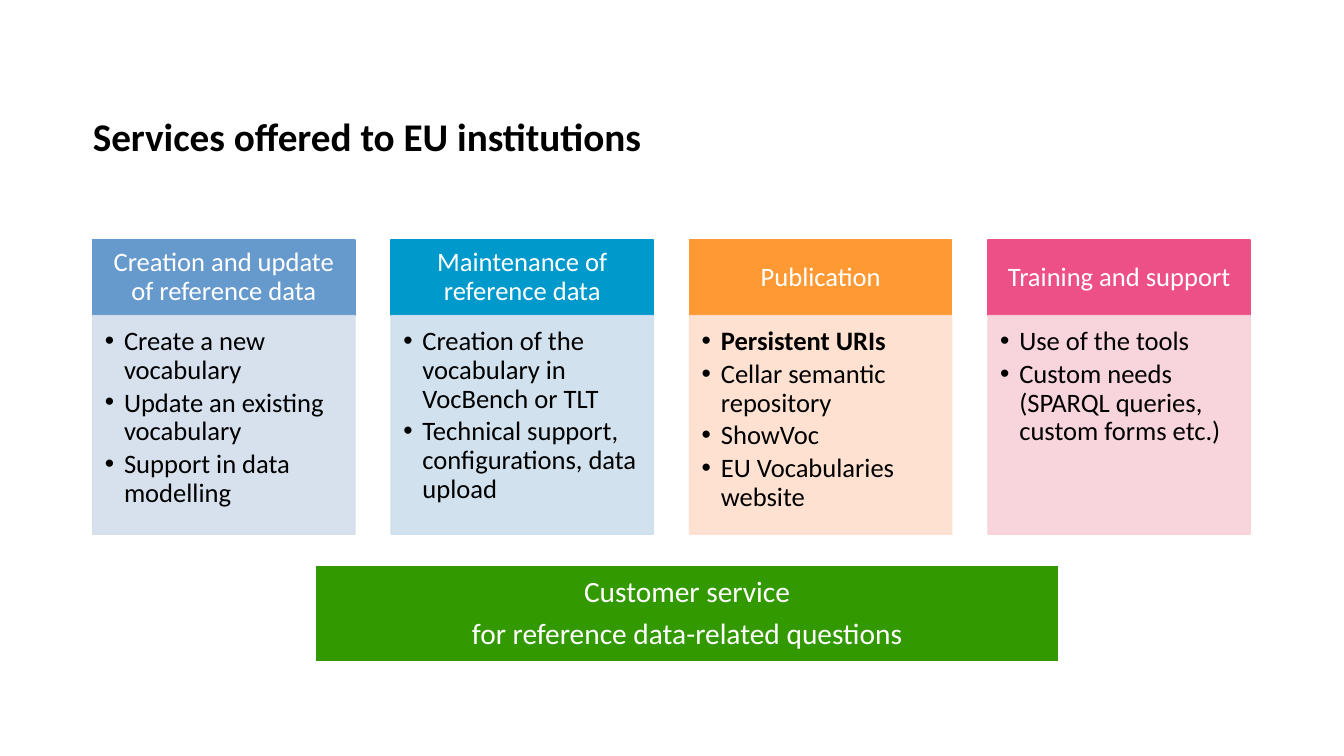
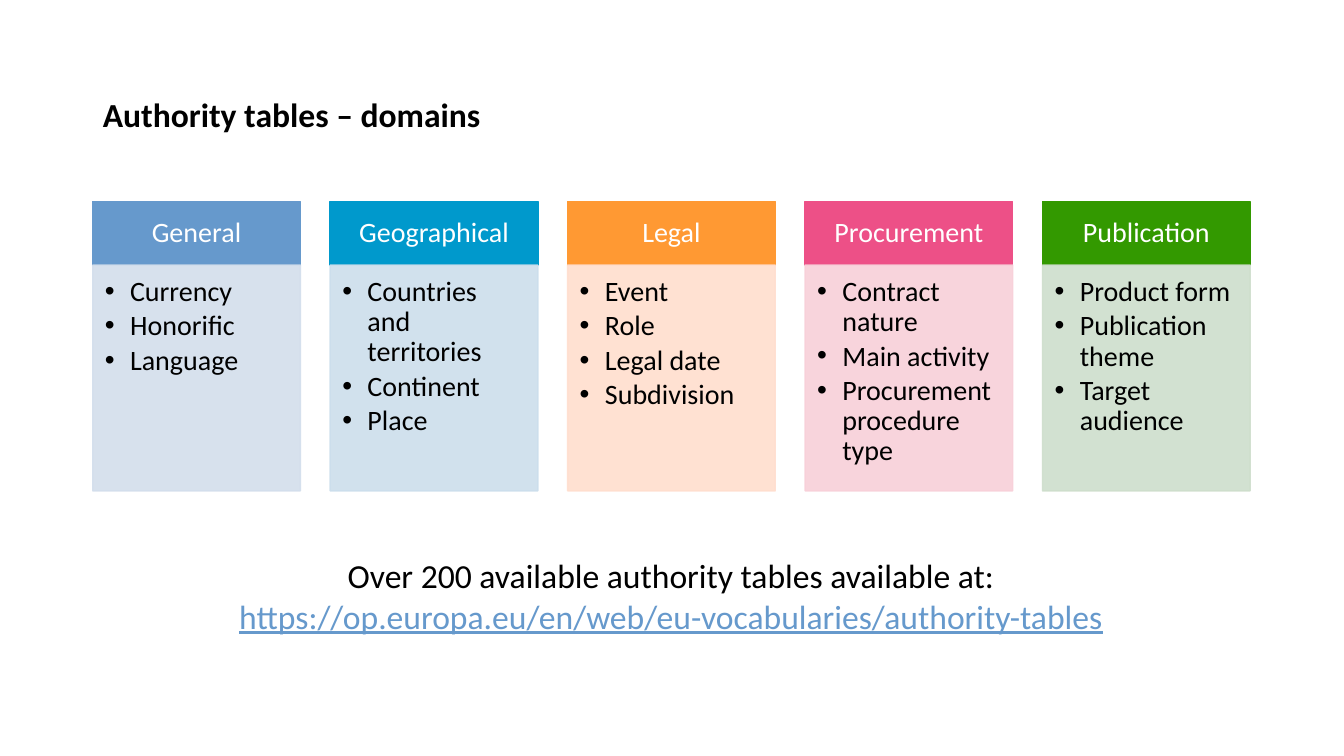
from lxml.etree import SubElement
from pptx import Presentation
from pptx.dml.color import RGBColor
from pptx.enum.shapes import MSO_SHAPE
from pptx.enum.text import MSO_ANCHOR, MSO_AUTO_SIZE, PP_ALIGN
from pptx.oxml.ns import qn
from pptx.util import Pt

# Shared style: lengths are px, 100 to the inch
SCALE = 9144
FONT = "Calibri"
BLACK, WHITE = "000000", "FFFFFF"
BLUE, CYAN, ORANGE, PINK, GREEN = "6699CC", "0099CC", "FF9933", "ED5087", "339900"
TINTS = {BLUE: "D3DEEC", CYAN: "CCDEEC", ORANGE: "FFDECE",
         PINK: "F8D0D9", GREEN: "CEDECC"}
LEFT, WIDTH = 92, 1148


def px(n):
    return round(n * SCALE)


def color(code):
    return RGBColor.from_string(code)


def place(shape, box):
    shape.left, shape.top, shape.width, shape.height = map(px, box)


def frame(shape, insets, anchor):
    text = shape.text_frame
    text.word_wrap = True
    text.auto_size = MSO_AUTO_SIZE.NONE
    text.vertical_anchor = anchor
    (text.margin_left, text.margin_top,
     text.margin_right, text.margin_bottom) = map(px, insets)
    return text


def style(run, size, code, bold=False):
    font = run.font
    font.name, font.size, font.bold = FONT, Pt(size), bold
    font.color.rgb = color(code)


def write(text, lines, size, code, align, after=0, indent=0, bold=()):
    """Fill a frame with one paragraph for each line, bulleted if indented."""
    for i, line in enumerate(lines):
        para = text.paragraphs[0] if i == 0 else text.add_paragraph()
        para.text = line
        para.alignment = align
        para.line_spacing = 0.9
        para.space_before = Pt(0)
        para.space_after = Pt(after)
        if indent:
            props = para._p.get_or_add_pPr()
            props.set("marL", str(px(indent)))
            props.set("indent", str(-px(indent)))
            SubElement(props, qn("a:buFont")).set("typeface", "Arial")
            SubElement(props, qn("a:buChar")).set("char", "•")
        for run in para.runs:
            style(run, size, code, line in bold)


def block(slide, box, fill, edge, alpha=None):
    shape = slide.shapes.add_shape(MSO_SHAPE.RECTANGLE, *map(px, box))
    shape.shadow.inherit = False
    shape.fill.solid()
    shape.fill.fore_color.rgb = color(fill)
    shape.line.color.rgb = color(edge)
    shape.line.width = Pt(1)
    if alpha:
        for tone in shape._element.spPr.iter(qn("a:srgbClr")):
            SubElement(tone, qn("a:alpha")).set("val", str(alpha * 1000))
    return shape


def title(slide, words, box, size, side):
    head = slide.shapes.title
    place(head, box)
    text = frame(head, (side, 5, side, 5 if side else 0), MSO_ANCHOR.BOTTOM)
    write(text, [words], size, BLACK, PP_ALIGN.LEFT, bold=(words,))


def card(slide, box, top, tone, name, items, size, indent, bold):
    """A coloured header over a tinted list."""
    x, y, w, h = box
    head = block(slide, (x, y, w, top), tone, tone)
    write(frame(head, (15, 8, 15, 8), MSO_ANCHOR.MIDDLE),
          [name], size, WHITE, PP_ALIGN.CENTER)
    tint = TINTS[tone]
    body = block(slide, (x, y + top, w, h - top), tint, tint, 90)
    write(frame(body, (12, 12, 15, 17), MSO_ANCHOR.TOP),
          items, size, BLACK, PP_ALIGN.LEFT, size * 0.15, indent, bold)


def cards(slide, box, wide, top, data, size, indent, bold=()):
    """Spread equal cards over the width of the box."""
    x, y, w, h = box
    step = (w - wide) / (len(data) - 1)
    for i, (tone, (name, items)) in enumerate(zip(TINTS, data.items())):
        card(slide, (x + i * step, y, wide, h), top, tone, name, items,
             size, indent, bold)


def banner(slide, box, lines):
    text = frame(block(slide, box, GREEN, WHITE), (9, 9, 9, 9), MSO_ANCHOR.MIDDLE)
    write(text, lines, 21, WHITE, PP_ALIGN.CENTER, 7)


def source(slide, box, words, link):
    """A centred sentence that ends in a web address."""
    text = frame(slide.shapes.add_textbox(*map(px, box)), (10, 5, 10, 5), MSO_ANCHOR.TOP)
    para = text.paragraphs[0]
    para.text = words
    para.alignment = PP_ALIGN.CENTER
    style(para.runs[0], 24, BLACK)
    run = para.add_run()
    run.text = link
    style(run, 24, BLUE)
    run.font.underline = True


SERVICES = {
    "Creation and update of reference data": [
        "Create a new vocabulary", "Update an existing vocabulary",
        "Support in data modelling"],
    "Maintenance of reference data": [
        "Creation of the vocabulary in VocBench or TLT",
        "Technical support, configurations, data upload"],
    "Publication": [
        "Persistent URIs", "Cellar semantic repository", "ShowVoc",
        "EU Vocabularies website"],
    "Training and support": [
        "Use of the tools", "Custom needs (SPARQL queries, custom forms etc.)"],
}

DOMAINS = {
    "General": ["Currency", "Honorific", "Language"],
    "Geographical": ["Countries and territories", "Continent", "Place"],
    "Legal": ["Event", "Role", "Legal date", "Subdivision"],
    "Procurement": ["Contract nature", "Main activity", "Procurement procedure type"],
    "Publication": ["Product form", "Publication theme", "Target audience"],
}


def main():
    deck = Presentation()
    deck.slide_width, deck.slide_height = px(1333), px(750)
    layout = deck.slide_layouts[5]

    # Services
    slide = deck.slides.add_slide(layout)
    title(slide, "Services offered to EU institutions", (LEFT, 14, WIDTH, 145), 28, 0)
    cards(slide, (LEFT, 238, WIDTH, 292), 260, 75, SERVICES, 19, 19, ("Persistent URIs",))
    banner(slide, (313, 561, 737, 96),
           ["Customer service", "for reference data-related questions"])

    # Domains
    slide = deck.slides.add_slide(layout)
    title(slide, "Authority tables – domains", (LEFT, 28, WIDTH, 111), 24, 10)
    cards(slide, (LEFT, 200, WIDTH, 287), 206, 63, DOMAINS, 20, 25)
    source(slide, (218, 546, 895, 91), "Over 200 available authority tables available at: ",
           "https://op.europa.eu/en/web/eu-vocabularies/authority-tables")

    deck.save("out.pptx")


if __name__ == "__main__":
    main()
